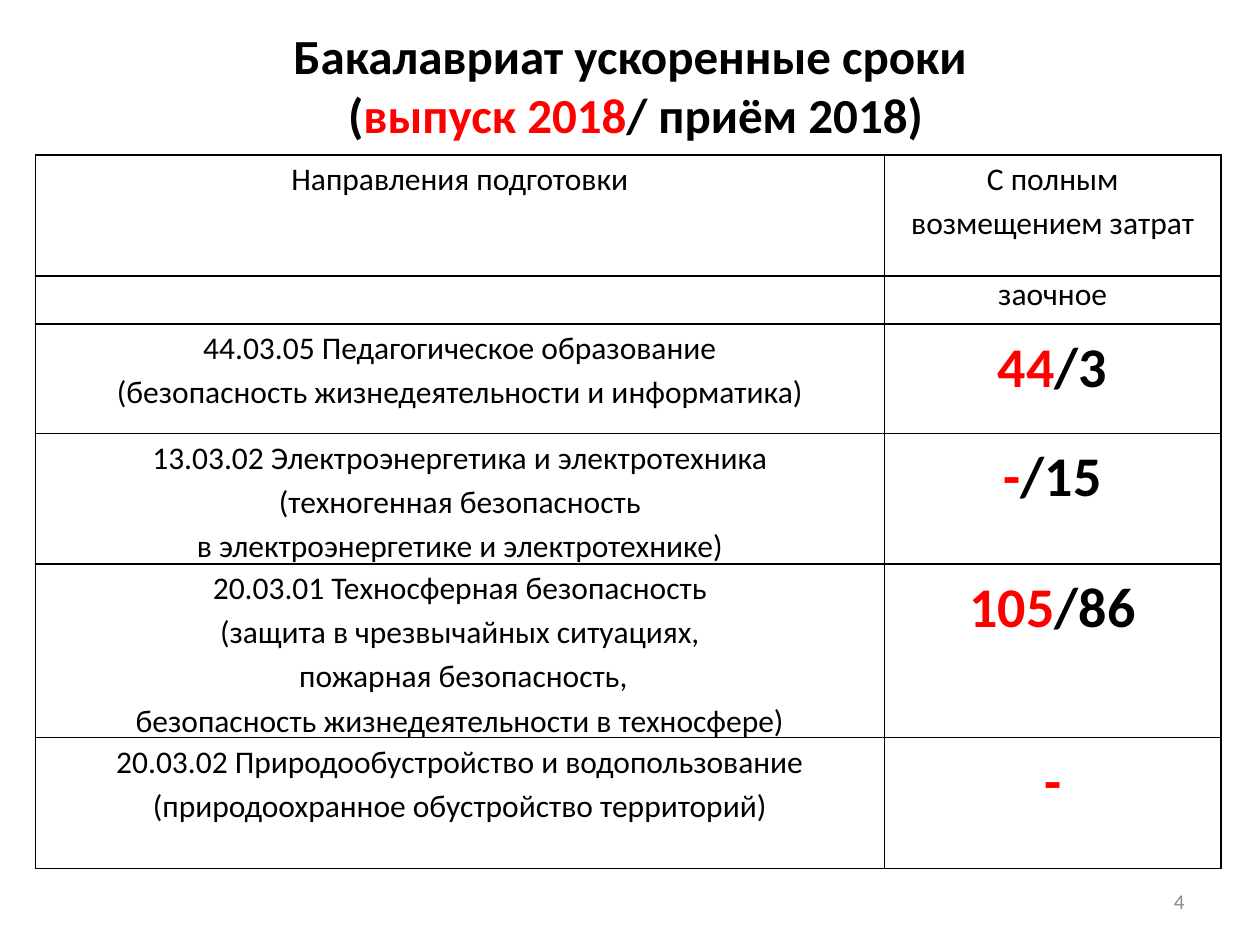
from lxml import etree
from pptx import Presentation
from pptx.dml.color import RGBColor
from pptx.enum import text
from pptx.oxml.ns import qn
from pptx.util import Inches, Pt

BLACK, RED, GREY = "000000", "FF0000", "8C8C8C"
COLUMNS = [6.74, 2.67]
ROW_HEIGHTS = [0.96, 0.38, 0.87, 0.96, 1.29, 1.04]
# Programme paragraphs, graduates, intake
PROGRAMMES = [
    (["44.03.05 Педагогическое образование\n"
      "(безопасность жизнедеятельности и информатика)"], "44", "/3"),
    (["13.03.02 Электроэнергетика и электротехника",
      "(техногенная безопасность\nв электроэнергетике и электротехнике)"], "-", "/15"),
    (["20.03.01 Техносферная безопасность\n(защита в чрезвычайных ситуациях,\n"
      " пожарная безопасность,\nбезопасность жизнедеятельности в техносфере)"], "105", "/86"),
    (["20.03.02 Природообустройство и водопользование\n"
      "(природоохранное обустройство территорий)"], "-", ""),
]


def rgb(value):
    return RGBColor.from_string(value)


def write(p, content, size=18, color=BLACK, bold=False,
          align=text.PP_ALIGN.CENTER, spacing=None):
    """Append formatted text to a paragraph; newlines become line breaks."""
    p.alignment = align
    if spacing:
        p.line_spacing = spacing
    for i, line in enumerate(content.split("\n")):
        if i:
            p.add_line_break()
        r = p.add_run()
        r.text = line
        r.font.name = "Calibri"
        r.font.size = Pt(size)
        r.font.bold = bold
        r.font.color.rgb = rgb(color)


def place(sp, left, top, width, height):
    sp.left, sp.top = Inches(left), Inches(top)
    sp.width, sp.height = Inches(width), Inches(height)


def add_title(s):
    sp = s.shapes.title
    place(sp, 0, 0.15, 10, 1.04)
    tf = sp.text_frame
    tf.word_wrap = True
    tf.vertical_anchor = text.MSO_ANCHOR.MIDDLE
    p = tf.paragraphs[0]
    for content, color in [("Бакалавриат ускоренные сроки\n (", BLACK),
                           ("выпуск 2018", RED), ("/ приём 2018)", BLACK)]:
        write(p, content, size=28, color=color, bold=True)


def add_page_number(s, number):
    tf = s.shapes.add_textbox(Inches(7.17), Inches(6.95), Inches(2.33), Inches(0.4)).text_frame
    tf.word_wrap = True
    tf.vertical_anchor = text.MSO_ANCHOR.MIDDLE
    write(tf.paragraphs[0], number, size=12, color=GREY, align=text.PP_ALIGN.RIGHT)


def style_cell(cell):
    cell.margin_left = cell.margin_right = Inches(0.07)
    cell.margin_top = cell.margin_bottom = 0
    tc_pr = cell._tc.get_or_add_tcPr()
    for side in ("lnL", "lnR", "lnT", "lnB"):
        ln = etree.SubElement(tc_pr, qn(f"a:{side}"), w=str(Pt(1)))
        fill = etree.SubElement(ln, qn("a:solidFill"))
        etree.SubElement(fill, qn("a:srgbClr"), val=BLACK)
    cell.fill.background()


def add_programme_table(s):
    table = s.shapes.add_table(len(ROW_HEIGHTS), len(COLUMNS), Inches(0.28), Inches(1.23),
                               Inches(sum(COLUMNS)), Inches(sum(ROW_HEIGHTS))).table
    table.first_row = table.horz_banding = False
    for column, width in zip(table.columns, COLUMNS):
        column.width = Inches(width)
    for row, height in zip(table.rows, ROW_HEIGHTS):
        row.height = Inches(height)
    for cell in table.iter_cells():
        style_cell(cell)

    def first_paragraph(row, col):
        return table.cell(row, col).text_frame.paragraphs[0]

    write(first_paragraph(0, 0), "Направления подготовки", spacing=1.15)
    write(first_paragraph(0, 1), "С полным возмещением затрат", spacing=1.15)
    write(first_paragraph(1, 1), "заочное")
    for row, (names, graduates, intake) in enumerate(PROGRAMMES, start=2):
        tf = table.cell(row, 0).text_frame
        for i, name in enumerate(names):
            write(tf.add_paragraph() if i else tf.paragraphs[0], name, spacing=1.15)
        p = first_paragraph(row, 1)
        write(p, graduates, size=32, color=RED, bold=True, spacing=1.15)
        if intake:
            write(p, intake, size=32, bold=True, spacing=1.15)


def main():
    prs = Presentation()
    prs.slide_width, prs.slide_height = Inches(10), Inches(7.5)
    s = prs.slides.add_slide(prs.slide_layouts[5])
    add_page_number(s, "4")
    add_title(s)
    add_programme_table(s)
    prs.save("out.pptx")


if __name__ == "__main__":
    main()
